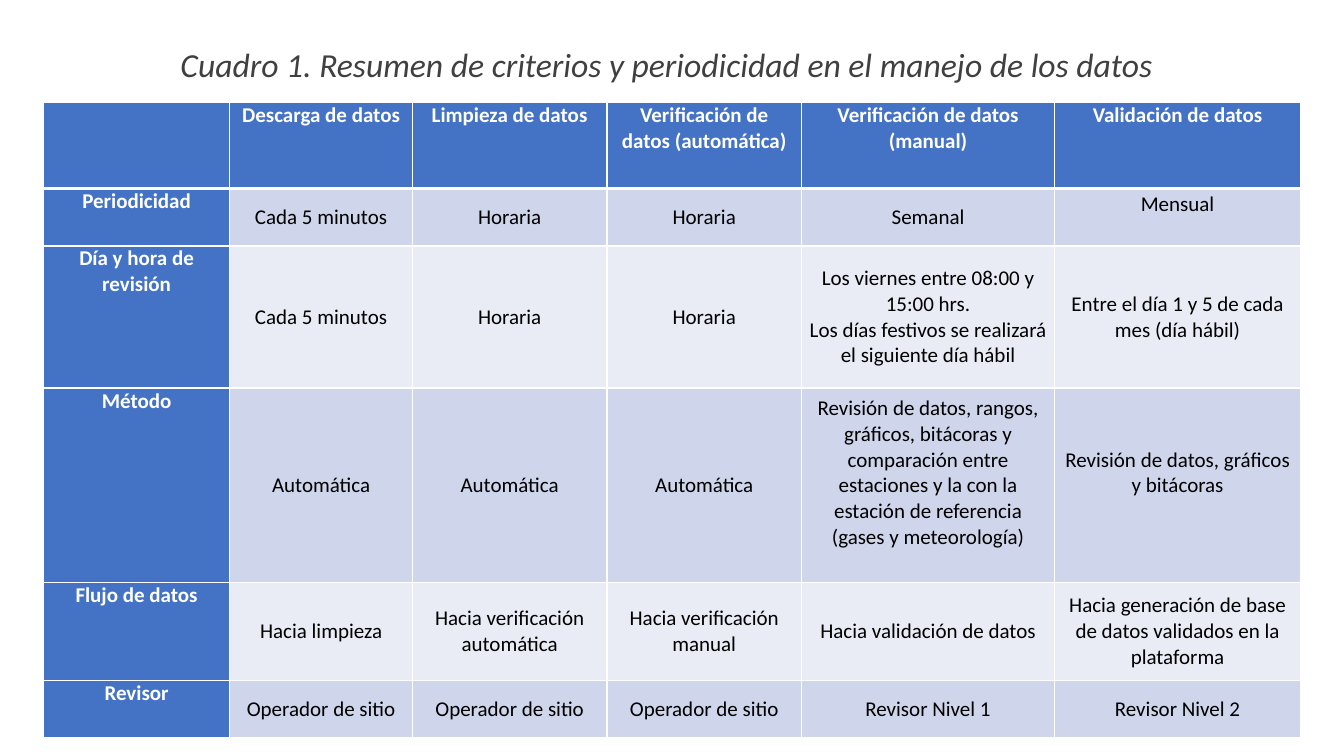
from lxml.etree import SubElement
from pptx import Presentation
from pptx.dml.color import RGBColor
from pptx.enum.text import MSO_ANCHOR, PP_ALIGN
from pptx.oxml.ns import qn
from pptx.util import Inches, Pt

HEADING_FILL = "4472C4"
BAND_FILLS = ["E9EBF5", "CFD5EA"]
WHITE, BLACK, GRAY = "FFFFFF", "000000", "404040"

COLUMN_WIDTHS = [1.85, 1.81, 1.93, 1.93, 2.51, 2.44]
ROW_HEIGHTS = [0.85, 0.57, 1.41, 1.93, 0.97, 0.57]
CRITERIA = [
    ["", "Descarga de datos", "Limpieza de datos", "Verificación de datos (automática)",
     "Verificación de datos (manual)", "Validación de datos"],
    ["Periodicidad", "Cada 5 minutos", "Horaria", "Horaria", "Semanal", "Mensual"],
    ["Día y hora de revisión", "Cada 5 minutos", "Horaria", "Horaria",
     "Los viernes entre 08:00 y 15:00 hrs.\n"
     "Los días festivos se realizará el siguiente día hábil",
     "Entre el día 1 y 5 de cada mes (día hábil)"],
    ["Método", "Automática", "Automática", "Automática",
     "Revisión de datos, rangos, gráficos, bitácoras y comparación entre estaciones "
     "y la con la estación de referencia (gases y meteorología)",
     "Revisión de datos, gráficos y bitácoras"],
    ["Flujo de datos", "Hacia limpieza", "Hacia verificación automática",
     "Hacia verificación manual", "Hacia validación de datos",
     "Hacia generación de base de datos validados en la plataforma"],
    ["Revisor", "Operador de sitio", "Operador de sitio", "Operador de sitio",
     "Revisor Nivel 1", "Revisor Nivel 2"],
]
# Cells whose text sits one line higher than the middle
RAISED_CELLS = {(1, 5), (3, 4), (3, 5)}
LINE_HEIGHT = 0.25


def rgb(value):
    return RGBColor.from_string(value)


def add_border(cell, side, points):
    line = SubElement(cell._tc.get_or_add_tcPr(), qn(f"a:ln{side}"), w=str(Pt(points)))
    SubElement(SubElement(line, qn("a:solidFill")), qn("a:srgbClr"), val=WHITE)


presentation = Presentation()
presentation.slide_width = Inches(13.33)
presentation.slide_height = Inches(7.5)
slide = presentation.slides.add_slide(presentation.slide_layouts[6])

criteria_table = slide.shapes.add_table(
    len(ROW_HEIGHTS), len(COLUMN_WIDTHS), Inches(0.43), Inches(1.02),
    Inches(sum(COLUMN_WIDTHS)), Inches(sum(ROW_HEIGHTS))).table
for column, width in zip(criteria_table.columns, COLUMN_WIDTHS):
    column.width = Inches(width)
for row, height in zip(criteria_table.rows, ROW_HEIGHTS):
    row.height = Inches(height)

for r, texts in enumerate(CRITERIA):
    for c, text in enumerate(texts):
        cell = criteria_table.cell(r, c)
        is_heading = r == 0 or c == 0
        add_border(cell, "L", 1)
        add_border(cell, "R", 1)
        add_border(cell, "T", 3 if r == 1 else 1)
        add_border(cell, "B", 3 if r == 0 else 1)
        cell.fill.solid()
        cell.fill.fore_color.rgb = rgb(HEADING_FILL if is_heading else BAND_FILLS[r % 2])
        cell.margin_left = cell.margin_right = Inches(0.07)
        cell.margin_top = Inches(0)
        cell.margin_bottom = Inches(LINE_HEIGHT if (r, c) in RAISED_CELLS else 0)
        cell.vertical_anchor = MSO_ANCHOR.TOP if is_heading else MSO_ANCHOR.MIDDLE
        cell.text = text
        for paragraph in cell.text_frame.paragraphs:
            paragraph.alignment = PP_ALIGN.CENTER
            paragraph.font.name = "Calibri"
            paragraph.font.size = Pt(15)
            paragraph.font.bold = is_heading
            paragraph.font.color.rgb = rgb(WHITE if is_heading else BLACK)

title = slide.shapes.add_textbox(
    Inches(0.86), Inches(0.3), Inches(11.5), Inches(0.72)).text_frame
title.word_wrap = True
title.vertical_anchor = MSO_ANCHOR.MIDDLE
title.text = "Cuadro 1. Resumen de criterios y periodicidad en el manejo de los datos"
caption = title.paragraphs[0]
caption.alignment = PP_ALIGN.CENTER
caption.line_spacing = 0.9
caption.font.name = "Calibri"
caption.font.size = Pt(24)
caption.font.italic = True
caption.font.color.rgb = rgb(GRAY)

presentation.save("out.pptx")
